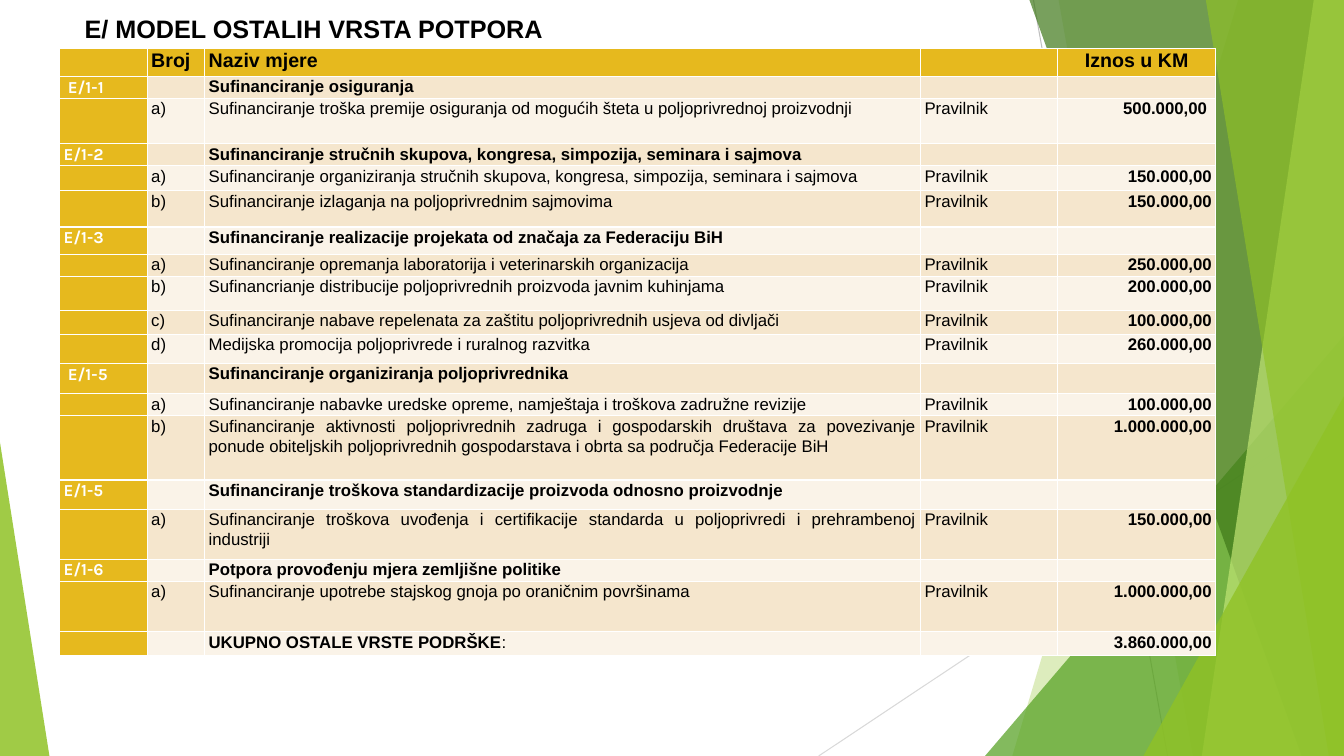
from dataclasses import dataclass

from lxml.etree import SubElement
from pptx import Presentation
from pptx.dml.color import RGBColor
from pptx.enum.shapes import MSO_CONNECTOR, MSO_SHAPE
from pptx.enum.text import PP_ALIGN
from pptx.oxml.ns import qn
from pptx.util import Inches, Pt


@dataclass(frozen=True)
class Theme:
    """Colours, fonts and type sizes."""
    ink: str = "000000"
    paper: str = "FFFFFF"
    gold: str = "E6B91E"
    bands: tuple = ("FAF3E8", "F5E6CD")
    leaf: str = "90C226"
    grass: str = "54A021"
    forest: str = "3F7819"
    lime: str = "C0E474"
    rules: tuple = ("BFBFBF", "D9D9D9")
    font: str = "Arial"
    label_font: str = "Karla"
    title: int = 18
    header: int = 14
    body: int = 12


@dataclass(frozen=True)
class Box:
    """A region measured in one-inch grid columns and rows."""
    left: float
    top: float
    width: float
    height: float

    def point(self, x, y):
        """Return a point of the region in slide units."""
        return Inches(self.left + x), Inches(self.top + y)

    def frame(self):
        """Return left, top, width and height in slide units."""
        return [Inches(size) for size in (self.left, self.top, self.width, self.height)]


THEME = Theme()
PAGE = Box(0, 0, 13.33, 7.5)
TITLE = Box(0.74, 0.08, 9.4, 0.42)
TABLE = Box(0.59, 0.48, 11.47, 6.03)
COLUMNS = (0.87, 0.57, 7.1, 1.36, 1.57)
HEADINGS = ("", "Broj", "Naziv mjere", "", "Iznos u KM")
HEADER_HEIGHT, TOTAL_HEIGHT = 0.28, 0.24
GROUPS = [
    (" E/1-1", "Sufinanciranje osiguranja", 0.22, [
        ("Sufinanciranje troška premije osiguranja od mogućih šteta u poljoprivrednoj proizvodnji", "500.000,00 ", 0.45)]),
    ("E/1-2", "Sufinanciranje stručnih skupova, kongresa, simpozija, seminara i sajmova", 0.22, [
        ("Sufinanciranje organiziranja stručnih skupova, kongresa, simpozija, seminara i sajmova", "150.000,00", 0.25),
        ("Sufinanciranje izlaganja na poljoprivrednim sajmovima", "150.000,00", 0.36)]),
    ("E/1-3", "Sufinanciranje realizacije projekata od značaja za Federaciju BiH", 0.27, [
        ("Sufinanciranje opremanja laboratorija i veterinarskih organizacija", "250.000,00", 0.22),
        ("Sufinancrianje distribucije poljoprivrednih proizvoda javnim kuhinjama", "200.000,00", 0.34),
        ("Sufinanciranje nabave repelenata za zaštitu poljoprivrednih usjeva od divljači", "100.000,00", 0.24),
        ("Medijska promocija poljoprivrede i ruralnog razvitka", "260.000,00", 0.29)]),
    (" E/1-5", "Sufinanciranje organiziranja poljoprivrednika", 0.3, [
        ("Sufinanciranje nabavke uredske opreme, namještaja i troškova zadružne revizije", "100.000,00", 0.22),
        ("Sufinanciranje aktivnosti poljoprivrednih zadruga i gospodarskih društava za povezivanje ponude "
         "obiteljskih poljoprivrednih gospodarstava i obrta sa područja Federacije BiH", "1.000.000,00", 0.64)]),
    ("E/1-5", "Sufinanciranje troškova standardizacije proizvoda odnosno proizvodnje", 0.29, [
        ("Sufinanciranje troškova uvođenja i certifikacije standarda u poljoprivredi i prehrambenoj industriji",
         "150.000,00", 0.5)]),
    ("E/1-6", "Potpora provođenju mjera zemljišne politike", 0.22, [
        ("Sufinanciranje upotrebe stajskog gnoja po oraničnim površinama", "1.000.000,00", 0.5)]),
]


def paint(shape, color, opacity):
    """Give a shape a translucent fill without outline or shadow."""
    shape.shadow.inherit = False
    shape.line.fill.background()
    shape.fill.solid()
    shape.fill.fore_color.rgb = RGBColor.from_string(color)
    tint = shape.fill._xPr.find(qn("a:solidFill"))[0]
    SubElement(tint, qn("a:alpha"), val=str(opacity * 1000))


def add_rule(page, start, end, color):
    """Draw a thin straight line."""
    rule = page.shapes.add_connector(MSO_CONNECTOR.STRAIGHT, *start, *end)
    rule.line.color.rgb = RGBColor.from_string(color)
    rule.line.width = Pt(0.75)
    SubElement(rule._element.spPr, qn("a:effectLst"))


def add_facet(page, box, top_left, bottom_left, color, opacity):
    """Draw a full-height facet that ends at the right edge."""
    corners = [(top_left, 0), (box.width, 0), (box.width, box.height), (bottom_left, box.height)]
    start, *others = [box.point(*corner) for corner in corners]
    outline = page.shapes.build_freeform(*start)
    outline.add_line_segments(others, close=True)
    paint(outline.convert_to_shape(), color, opacity)


def add_wedge(page, box, apex, color, opacity):
    """Draw a triangle filling its box, with the apex at a share of its width."""
    wedge = page.shapes.add_shape(MSO_SHAPE.ISOSCELES_TRIANGLE, *box.frame())
    wedge.adjustments[0] = apex
    paint(wedge, color, opacity)


def corner_box(box, width, height):
    """Return the bottom right corner of a region."""
    return Box(box.left + box.width - width, box.top + box.height - height, width, height)


def add_backdrop(page, box):
    """Draw the green facets and thin lines around the page."""
    add_rule(page, box.point(10.25, 0), box.point(11.58, box.height), THEME.rules[0])
    add_rule(page, box.point(box.width, 4.03), box.point(8.12, box.height), THEME.rules[1])
    add_facet(page, box, 12.28, 10.04, THEME.leaf, 30)
    add_facet(page, box, 10.5, 11.83, THEME.leaf, 20)
    add_wedge(page, corner_box(box, 3.56, 4.17), 1, THEME.grass, 72)
    add_facet(page, box, 10.21, 12.91, THEME.forest, 70)
    add_facet(page, box, 13.03, 11.92, THEME.lime, 70)
    add_facet(page, box, 11.96, 13.18, THEME.leaf, 65)
    add_wedge(page, corner_box(box, 1.99, 3.57), 1, THEME.leaf, 80)
    add_wedge(page, Box(box.left, box.top + 4.39, 0.49, 3.11), 0, THEME.leaf, 85)


def style_font(font, size, bold, color=THEME.ink, name=THEME.font):
    """Set every font property at once."""
    font.size, font.bold, font.name = Pt(size), bold, name
    font.color.rgb = RGBColor.from_string(color)


def add_title(page, box, text):
    """Write the page heading."""
    frame = page.shapes.add_textbox(*box.frame()).text_frame
    frame.word_wrap = True
    para = frame.paragraphs[0]
    para.text = text
    style_font(para.font, THEME.title, True)


def fill_cell(cell, fill, text, align, **font):
    """Colour a cell and write its text."""
    cell.fill.solid()
    cell.fill.fore_color.rgb = RGBColor.from_string(fill)
    cell.margin_left = cell.margin_right = Inches(0.04)
    cell.margin_top = cell.margin_bottom = 0
    para = cell.text_frame.paragraphs[0]
    para.alignment, para.line_spacing = align, 1.06
    para.space_before = para.space_after = Pt(6)
    if text:
        span = para.add_run()
        span.text = text
        style_font(span.font, **font)
    else:
        SubElement(para._p, qn("a:endParaRPr"), sz=str(THEME.body * 100))


def measure_rows():
    """List the body rows as texts, height and whether the name is bold."""
    rows = []
    for label, heading, height, measures in GROUPS:
        rows.append(((label, "", heading, "", ""), height, True))
        for letter, (name, amount, height) in zip("abcd", measures):
            rows.append((("", f"{letter})", name, "Pravilnik", amount), height, False))
    rows.append((("", "", "UKUPNO OSTALE VRSTE PODRŠKE", "", "3.860.000,00"), TOTAL_HEIGHT, True))
    return rows


def add_measures(page, box):
    """Build the table of measures and amounts."""
    rows = [(HEADINGS, HEADER_HEIGHT, True)] + measure_rows()
    table = page.shapes.add_table(len(rows), len(COLUMNS), *box.frame()).table
    table.first_col = True
    for column, width in zip(table.columns, COLUMNS):
        column.width = Inches(box.width * width / sum(COLUMNS))
    total = sum(height for _, height, _ in rows)
    for index, (texts, height, strong) in enumerate(rows):
        table.rows[index].height = Inches(box.height * height / total)
        for place, text in enumerate(texts):
            is_header, is_label, is_amount = index == 0, place == 0, place == len(COLUMNS) - 1
            fill = THEME.gold if is_header or is_label else THEME.bands[index % 2]
            align = PP_ALIGN.JUSTIFY
            if is_amount:
                align = PP_ALIGN.CENTER if is_header else PP_ALIGN.RIGHT
            fill_cell(table.cell(index, place), fill, text, align,
                      size=THEME.header if is_header else THEME.body,
                      bold=strong or is_amount,
                      color=THEME.paper if is_label else THEME.ink,
                      name=THEME.label_font if is_label else THEME.font)
    colon = table.cell(len(rows) - 1, 2).text_frame.paragraphs[0].add_run()
    colon.text = ":"
    style_font(colon.font, THEME.body, False)


def main():
    """Build and save the deck."""
    deck = Presentation()
    deck.slide_width, deck.slide_height = PAGE.frame()[2:]
    page = deck.slides.add_slide(deck.slide_layouts[6])
    add_backdrop(page, PAGE)
    add_title(page, TITLE, "E/ MODEL OSTALIH VRSTA POTPORA")
    add_measures(page, TABLE)
    deck.save("out.pptx")


if __name__ == "__main__":
    main()
